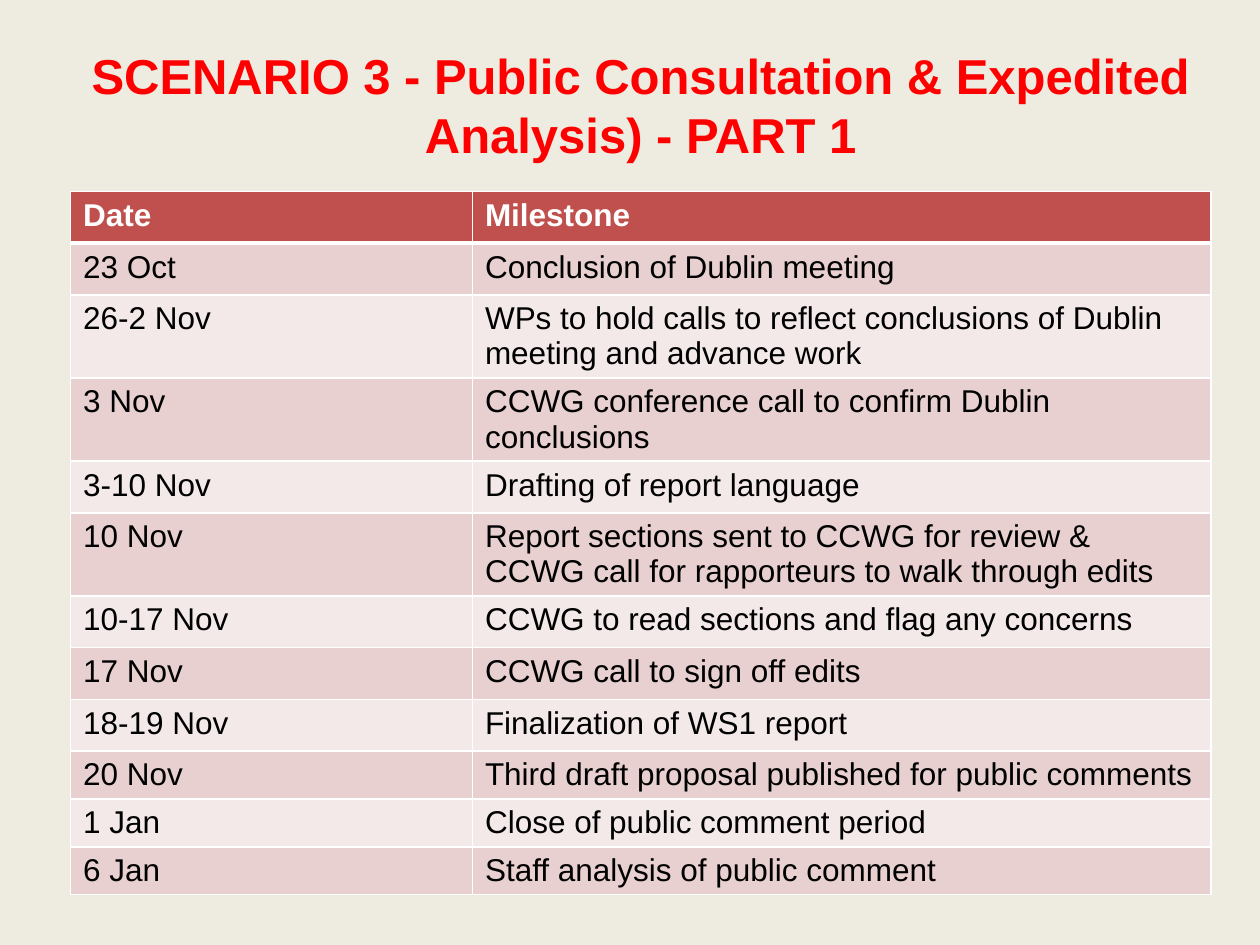
from lxml import etree
from pptx import Presentation
from pptx.dml.color import RGBColor
from pptx.enum import text
from pptx.oxml import ns
from pptx.util import Inches, Pt

CREAM = RGBColor(0xEE, 0xEC, 0xE1)
RED = RGBColor(0xFF, 0x00, 0x00)
BRICK = RGBColor(0xC0, 0x50, 0x4D)
ROSE = RGBColor(0xE8, 0xD0, 0xD0)
BLUSH = RGBColor(0xF4, 0xE9, 0xE9)
WHITE = RGBColor(0xFF, 0xFF, 0xFF)
BLACK = RGBColor(0x00, 0x00, 0x00)

LEFT, WIDTH = 0.56, 9.05
COLUMNS = (3.19, 5.86)
MILESTONES = [
    ("Date", "Milestone"),
    ("23 Oct", "Conclusion of Dublin meeting"),
    ("26-2 Nov", "WPs to hold calls to reflect conclusions of Dublin meeting and advance work"),
    ("3 Nov", "CCWG conference call to confirm Dublin conclusions"),
    ("3-10 Nov", "Drafting of report language"),
    ("10 Nov", "Report sections sent to CCWG for review & CCWG call for rapporteurs to walk through edits"),
    ("10-17 Nov", "CCWG to read sections and flag any concerns"),
    ("17 Nov", "CCWG call to sign off edits"),
    ("18-19 Nov", "Finalization of WS1 report"),
    ("20 Nov", "Third draft proposal published for public comments"),
    ("1 Jan", "Close of public comment period"),
    ("6 Jan", "Staff analysis of public comment"),
]
ROW_HEIGHTS = [0.41] * 9 + [0.2] * 3  # the last rows grow to fit their text


def write(frame, words, *, size, color, bold=False, align=text.PP_ALIGN.LEFT):
    paragraph = frame.paragraphs[0]
    paragraph.alignment = align
    run = paragraph.add_run()
    run.text = words
    run.font.name = "Arial"
    run.font.size = Pt(size)
    run.font.bold = bold
    run.font.color.rgb = color


def border(cell, **widths):
    """Draw white cell edges; widths are points keyed by L, R, T and B."""
    properties = cell._tc.get_or_add_tcPr()
    for side in "LRTB":
        line = etree.SubElement(properties, ns.qn(f"a:ln{side}"), w=str(Pt(widths[side])))
        fill = etree.SubElement(line, ns.qn("a:solidFill"))
        etree.SubElement(fill, ns.qn("a:srgbClr"), val=str(WHITE))


class Deck:
    def __init__(self):
        self.presentation = Presentation()
        self.presentation.slide_width = Inches(10)
        self.presentation.slide_height = Inches(7.5)
        self.slide = None

    def add_slide(self):
        self.slide = self.presentation.slides.add_slide(self.presentation.slide_layouts[5])
        background = self.slide.background.fill
        background.solid()
        background.fore_color.rgb = CREAM

    def title(self, words):
        heading = self.slide.shapes.title
        heading.left, heading.top = Inches(LEFT), Inches(0.31)
        heading.width, heading.height = Inches(WIDTH), Inches(0.86)
        frame = heading.text_frame
        frame.word_wrap = True
        frame.auto_size = text.MSO_AUTO_SIZE.NONE
        frame.vertical_anchor = text.MSO_ANCHOR.TOP
        write(frame, words, size=28, color=RED, bold=True, align=text.PP_ALIGN.CENTER)

    def table(self, rows):
        schedule = self.slide.shapes.add_table(
            len(rows), len(COLUMNS), Inches(LEFT), Inches(1.52),
            Inches(WIDTH), Inches(sum(ROW_HEIGHTS))).table
        for column, width in zip(schedule.columns, COLUMNS):
            column.width = Inches(width)
        for row, height in zip(schedule.rows, ROW_HEIGHTS):
            row.height = Inches(height)
        for r, entries in enumerate(rows):
            header = r == 0
            shade = BRICK if header else ROSE if r % 2 else BLUSH
            for c, words in enumerate(entries):
                cell = schedule.cell(r, c)
                border(cell, L=1, R=1, T=3 if r == 1 else 1, B=3 if header else 1)
                cell.fill.solid()
                cell.fill.fore_color.rgb = shade
                write(cell.text_frame, words, size=18,
                      color=WHITE if header else BLACK, bold=header)


def main():
    deck = Deck()
    deck.add_slide()
    deck.title("SCENARIO 3 - Public Consultation & Expedited Analysis) - PART 1")
    deck.table(MILESTONES)
    deck.presentation.save("out.pptx")


if __name__ == "__main__":
    main()
